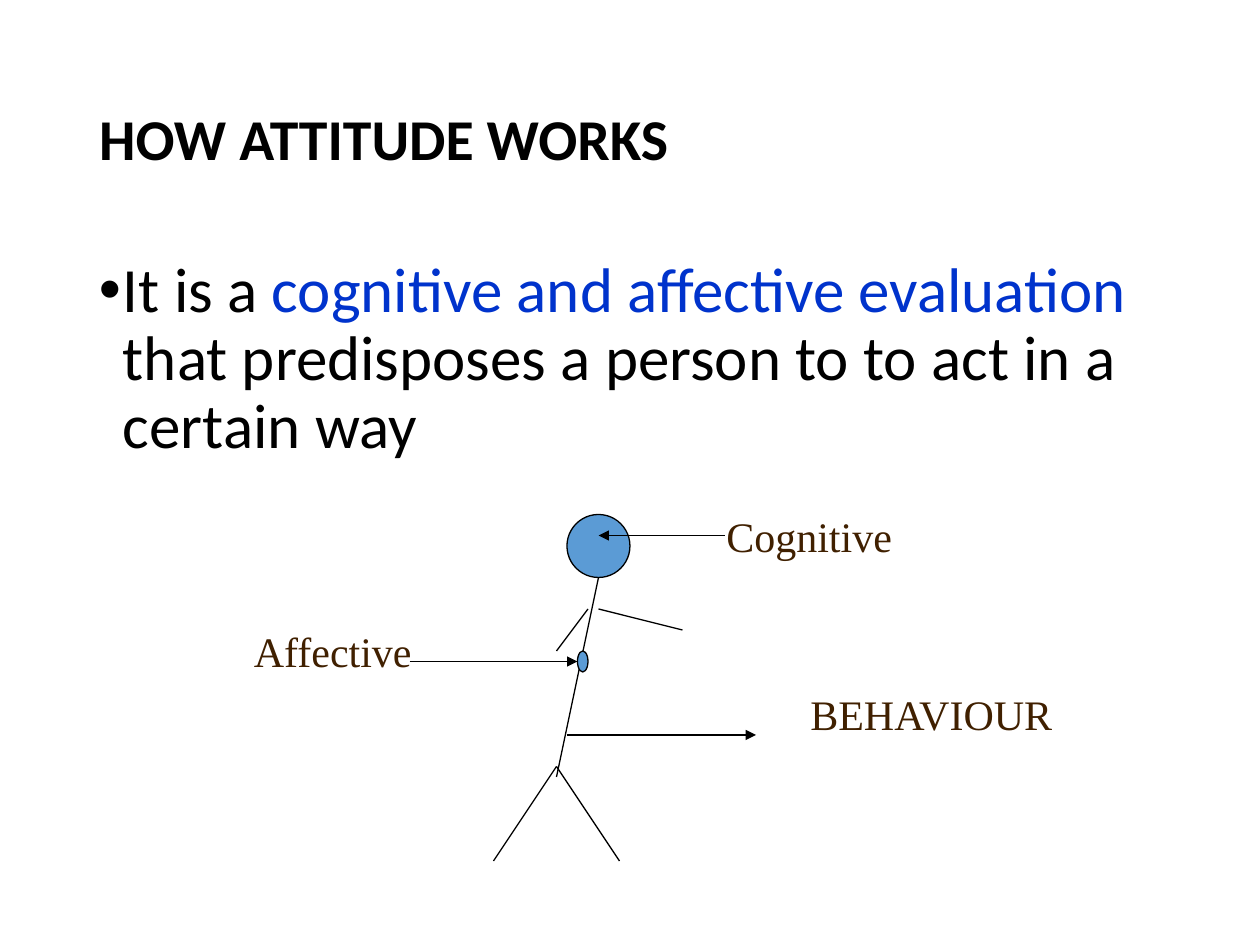
from lxml import etree
from pptx import Presentation
from pptx.dml.color import RGBColor
from pptx.enum.shapes import MSO_CONNECTOR, MSO_SHAPE
from pptx.enum.text import MSO_ANCHOR, MSO_AUTO_SIZE, PP_ALIGN
from pptx.oxml.ns import qn
from pptx.util import Inches, Pt

STRAIGHT = MSO_CONNECTOR.STRAIGHT
OVAL = MSO_SHAPE.OVAL
MIDDLE = MSO_ANCHOR.MIDDLE
NO_FIT = MSO_AUTO_SIZE.NONE
LEFT = PP_ALIGN.LEFT
BLACK = "000000"

deck = Presentation()
deck.slide_width, deck.slide_height = Inches(10), Inches(7.5)
column, row = deck.slide_width / 120, deck.slide_height / 90
slide = deck.slides.add_slide(deck.slide_layouts[5])
shapes = slide.shapes


def grid(*cells):
    return [round(cell * (row if i % 2 else column)) for i, cell in enumerate(cells)]


def paint(color_format, hex_color):
    color_format.rgb = RGBColor.from_string(hex_color)


title = shapes.title
title_box = dict(zip(("left", "top", "width", "height"), grid(8.25, 4.8, 103.5, 17.4)))
for name, value in title_box.items():
    setattr(title, name, value)
statement = shapes.add_textbox(*grid(8.25, 24, 103.5, 57))

blocks = [
    (title, 33, True, [("HOW ATTITUDE WORKS", BLACK)]),
    (statement, 36, False, [
        ("It is a ", BLACK),
        ("cognitive and affective evaluation", "0033CC"),
        (" that predisposes a person to to act in a certain way", BLACK),
    ]),
]
labels = [
    ("Cognitive", 68, 48, 23),
    ("Affective", 23, 59, 20),
    ("BEHAVIOUR", 76, 65, 29),
]

for block, size, bold, pieces in blocks:
    block.text_frame.word_wrap = True
    block.text_frame.auto_size = NO_FIT
    paragraph = block.text_frame.paragraphs[0]
    for name, value in {"alignment": LEFT, "line_spacing": 0.9}.items():
        setattr(paragraph, name, value)
    for words, color in pieces:
        run = paragraph.add_run()
        run.text = words
        for name, value in {"name": "Calibri", "size": Pt(size), "bold": bold}.items():
            setattr(run.font, name, value)
        paint(run.font.color, color)
title.text_frame.vertical_anchor = MIDDLE

statement_paragraph = statement.text_frame.paragraphs[0]
statement_paragraph.space_before = Pt(7.5)
bullet_format = statement_paragraph._p.get_or_add_pPr()
for name, value in {"marL": Inches(0.19), "indent": Inches(-0.19)}.items():
    bullet_format.set(name, str(value))
etree.SubElement(bullet_format, qn("a:buFont"), typeface="Arial")
etree.SubElement(bullet_format, qn("a:buChar"), char="•")

limbs = [
    (57, 55, 53, 74),
    (53, 73, 59, 82),
    (53, 73, 47, 82),
    (56, 58, 53, 62),
    (57, 58, 65, 60),
]
pointers = [(69, 51, 57, 51), (39, 63, 55, 63), (54, 70, 72, 70)]
head, heart = (54, 49, 6, 6), (55, 62, 1, 2)


for body_part in (head, limbs, pointers, heart):
    if body_part in (head, heart):
        oval = shapes.add_shape(OVAL, *grid(*body_part))
        oval.shadow.inherit = False
        oval.fill.solid()
        paint(oval.fill.fore_color, "5B9BD5")
        strokes = [oval]
    else:
        strokes = [shapes.add_connector(STRAIGHT, *grid(*ends)) for ends in body_part]
    for stroke in strokes:
        stroke.line.width = Pt(0.75)
        paint(stroke.line.color, BLACK)
        if body_part is pointers:
            etree.SubElement(stroke.line._get_or_add_ln(), qn("a:tailEnd"), type="triangle")
        if body_part in (limbs, pointers):
            etree.SubElement(stroke._element.spPr, qn("a:effectLst"))

for words, left, top, width in labels:
    label = shapes.add_textbox(*grid(left, top, width, 6))
    for name, value in {"word_wrap": True, "vertical_anchor": MIDDLE}.items():
        setattr(label.text_frame, name, value)
    run = label.text_frame.paragraphs[0].add_run()
    run.text = words
    for name, value in {"name": "Times New Roman", "size": Pt(24)}.items():
        setattr(run.font, name, value)
    paint(run.font.color, "402000")

deck.save("out.pptx")
